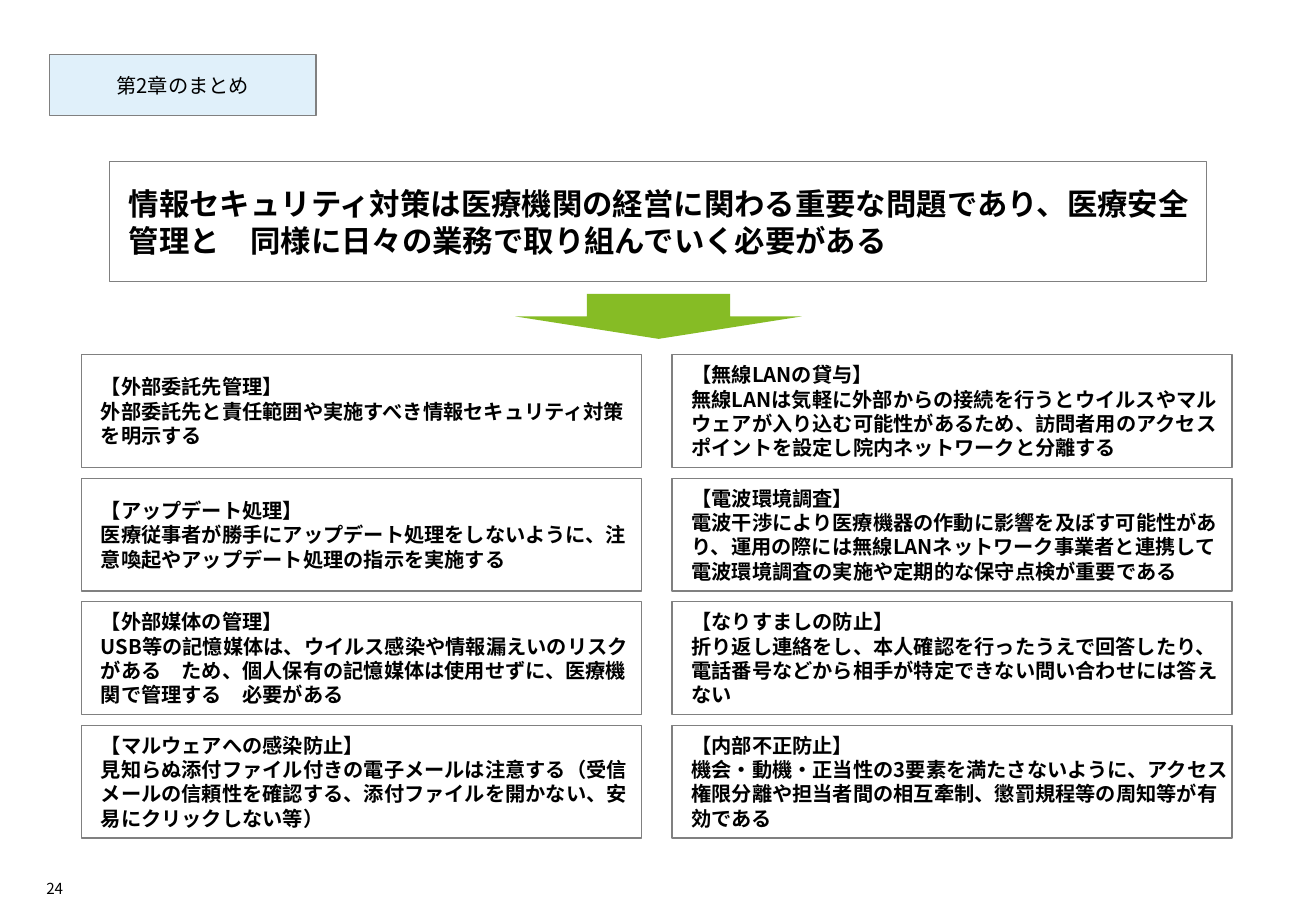
from lxml import etree
from pptx import Presentation
from pptx.dml.color import RGBColor
from pptx.enum.shapes import MSO_SHAPE
from pptx.enum.text import MSO_ANCHOR, PP_ALIGN
from pptx.oxml.ns import qn
from pptx.util import Inches, Pt

RECT, ARROW = MSO_SHAPE.RECTANGLE, MSO_SHAPE.DOWN_ARROW
MIDDLE, BOTTOM = MSO_ANCHOR.MIDDLE, MSO_ANCHOR.BOTTOM
LEFT, CENTER, RIGHT = PP_ALIGN.LEFT, PP_ALIGN.CENTER, PP_ALIGN.RIGHT
FONT = "Noto Sans CJK JP"
COLORS = {"text": "000000", "line": "808080", "tag": "E0F0FA", "arrow": "86BC25"}
LEAD = "情報セキュリティ対策は医療機関の経営に関わる重要な問題であり、医療安全管理と　同様に日々の業務で取り組んでいく必要がある"
TOPICS = [
    [
        ("【外部委託先管理】", "外部委託先と責任範囲や実施すべき情報セキュリティ対策を明示する"),
        ("【アップデート処理】", "医療従事者が勝手にアップデート処理をしないように、注意喚起やアップデート処理の指示を実施する"),
        ("【外部媒体の管理】", "USB等の記憶媒体は、ウイルス感染や情報漏えいのリスクがある　ため、個人保有の記憶媒体は使用せずに、医療機関で管理する　必要がある"),
        ("【マルウェアへの感染防止】", "見知らぬ添付ファイル付きの電子メールは注意する（受信メールの信頼性を確認する、添付ファイルを開かない、安易にクリックしない等）"),
    ],
    [
        ("【無線LANの貸与】", "無線LANは気軽に外部からの接続を行うとウイルスやマルウェアが入り込む可能性があるため、訪問者用のアクセスポイントを設定し院内ネットワークと分離する"),
        ("【電波環境調査】", "電波干渉により医療機器の作動に影響を及ぼす可能性があり、運用の際には無線LANネットワーク事業者と連携して電波環境調査の実施や定期的な保守点検が重要である"),
        ("【なりすましの防止】", "折り返し連絡をし、本人確認を行ったうえで回答したり、電話番号などから相手が特定できない問い合わせには答えない"),
        ("【内部不正防止】", "機会・動機・正当性の3要素を満たさないように、アクセス権限分離や担当者間の相互牽制、懲罰規程等の周知等が有効である"),
    ],
]


def color(name):
    """Return the named colour."""
    return RGBColor.from_string(COLORS[name])


def write(shape, lines, size, bold=False, align=LEFT, anchor=MIDDLE, indent=0, wrap=True):
    """Fill a shape with paragraphs of one style."""
    frame = shape.text_frame
    frame.word_wrap = wrap
    frame.vertical_anchor = anchor
    frame.margin_left = frame.margin_right = 0
    frame.margin_top = frame.margin_bottom = 0
    frame.text = "\n".join(lines)
    for para in frame.paragraphs:
        para.alignment = align
        para.line_spacing = Pt(size * 1.2)
        props = para._p.get_or_add_pPr()
        props.set("marL", str(Inches(indent)))
        props.set("indent", "0")
        font = para.font
        font.name, font.size, font.bold = FONT, Pt(size), bold
        font.color.rgb = color("text")
        etree.SubElement(font._element, qn("a:ea"), typeface=FONT)


def block(slide, kind, place, fill=None, line=None):
    """Add a preset shape with optional fill and outline."""
    shape = slide.shapes.add_shape(kind, *map(Inches, place))
    shape.shadow.inherit = False
    if fill:
        shape.fill.solid()
        shape.fill.fore_color.rgb = color(fill)
    else:
        shape.fill.background()
    if line:
        shape.line.color.rgb = color(line)
        shape.line.width = Pt(0.75)
    else:
        shape.line.fill.background()
    return shape


def panel(slide, place, lines, size):
    """Add an outlined box of bold text."""
    write(block(slide, RECT, place, line="line"), lines, size, bold=True, indent=0.16)


def main():
    """Build the chapter summary slide."""
    deck = Presentation()
    deck.slide_width, deck.slide_height = Inches(10.83), Inches(7.5)
    slide = deck.slides.add_slide(deck.slide_layouts[6])
    number = slide.shapes.add_textbox(*map(Inches, (0.32, 7.2, 0.2, 0.19)))
    write(number, ["24"], 9, align=RIGHT, anchor=BOTTOM, wrap=False)
    tag = block(slide, RECT, (0.41, 0.45, 2.19, 0.5), "tag", "line")
    write(tag, ["第2章のまとめ"], 12, align=CENTER)
    panel(slide, (0.9, 1.33, 9.03, 0.99), [LEAD], 18)
    block(slide, ARROW, (4.24, 2.42, 2.36, 0.37), "arrow")
    for col, topics in enumerate(TOPICS):
        for row, topic in enumerate(topics):
            place = (0.67 + 4.86 * col, 2.92 + 1.017 * row, 4.61, 0.93)
            panel(slide, place, topic, 12)
    deck.save("out.pptx")


if __name__ == "__main__":
    main()
